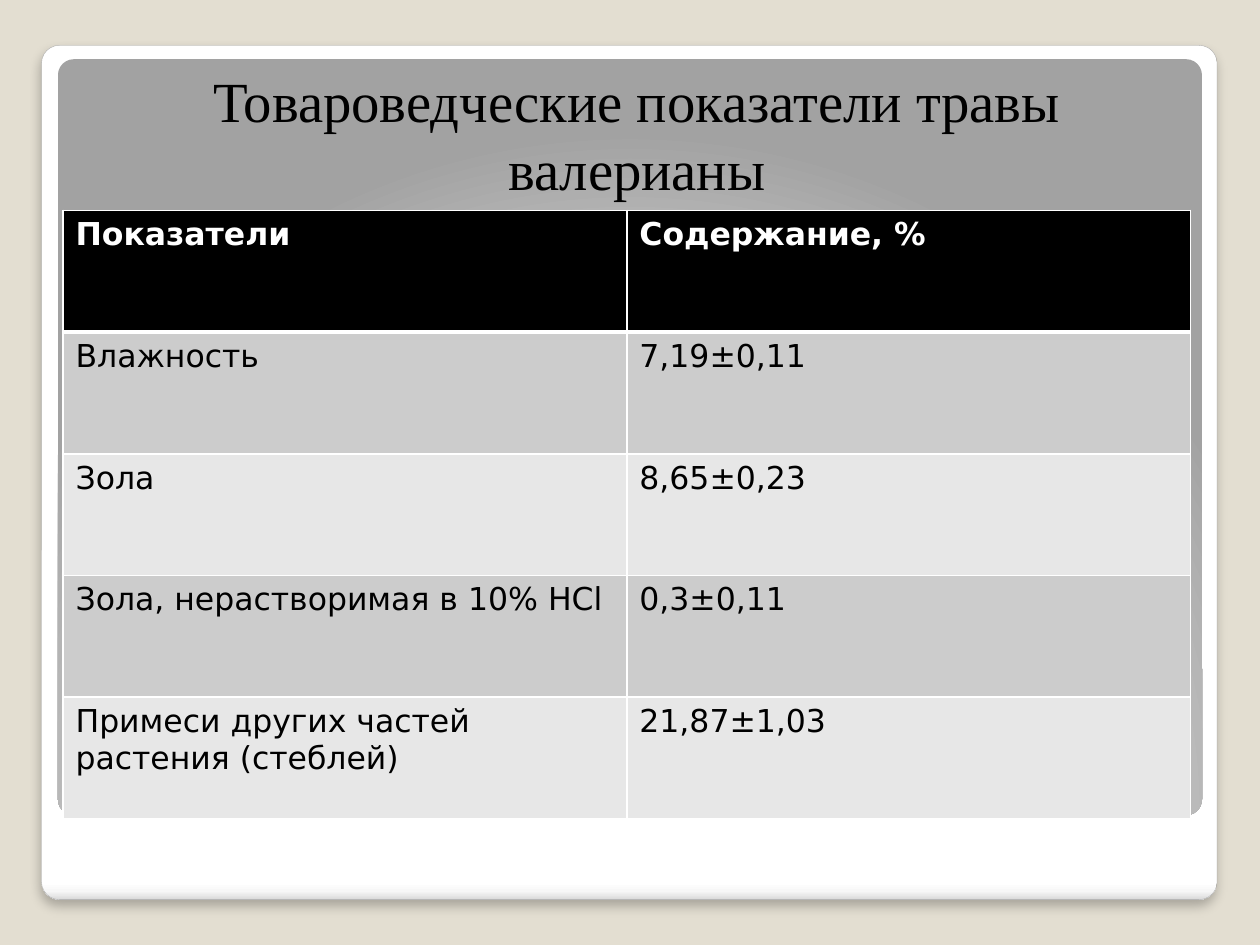
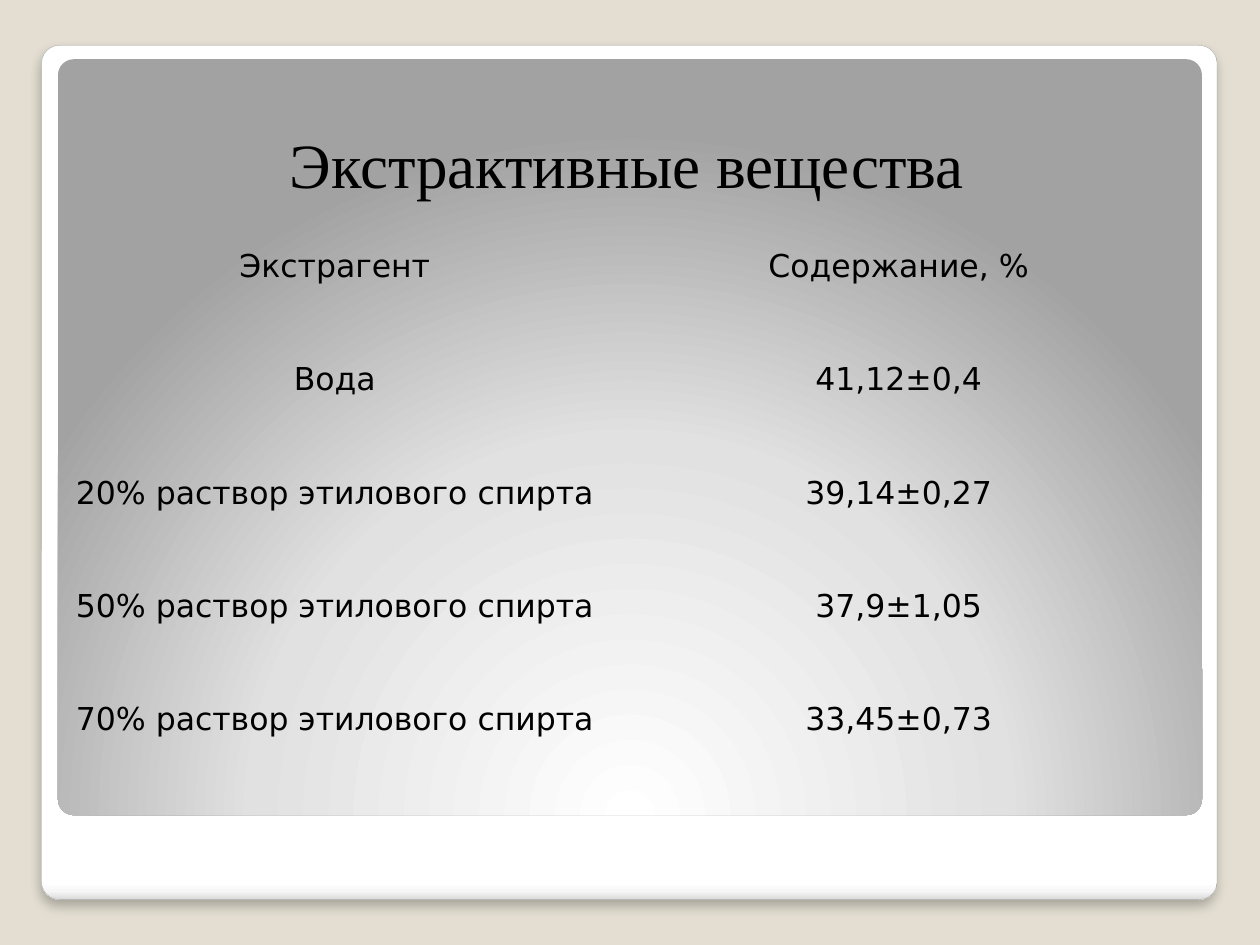
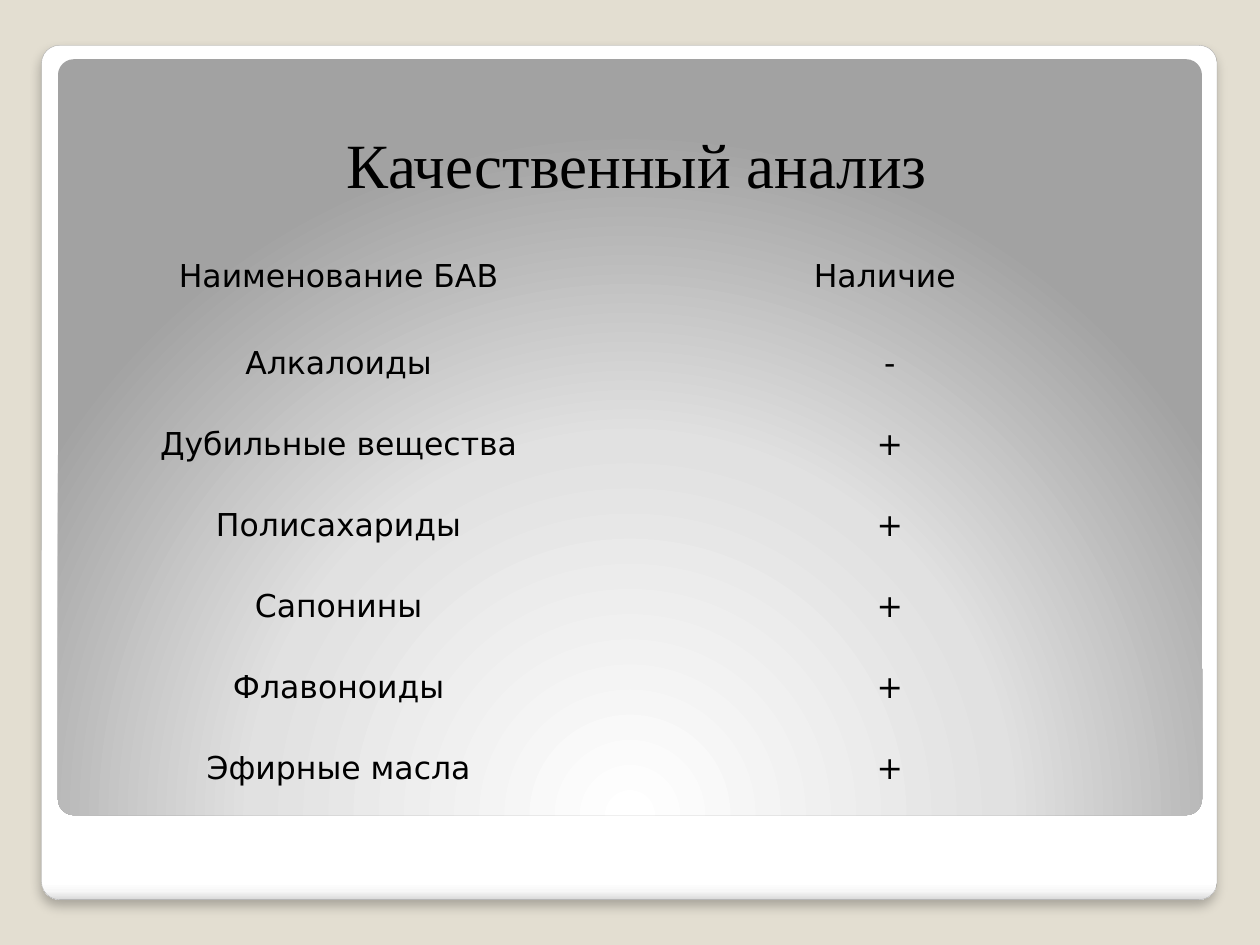
from pptx import Presentation
from pptx.dml.color import RGBColor
from pptx.enum.shapes import MSO_SHAPE
from pptx.enum.text import MSO_ANCHOR, MSO_AUTO_SIZE, PP_ALIGN
from pptx.oxml import parse_xml
from pptx.oxml.ns import nsdecls, qn
from pptx.util import Inches, Pt

COLORS = {
    "background": "E3DED1",
    "outline": "A4A4A4",
    "text": "000000",
    "header": "000000",
    "header text": "FFFFFF",
    "border": "FFFFFF",
    "odd row": "CCCCCC",
    "even row": "E7E7E7",
}
TITLE_FONT = "Times New Roman"
BODY_FONT = "DejaVu Sans"
NO_STYLE = "{2D5ABB26-0587-4C30-8999-92F81FD0307C}"
TITLE_TOP, TITLE_WIDTH, TITLE_HEIGHT = 0.5, 8.95, 1.15

# Positions in percent along the gradient, with the colour at each
CARD_STOPS = [(0, "FFFFFF"), (98, "FFFFFF"), (99, "F7F7F7"), (100, "DADADA")]
PANEL_STOPS = [(0, "FFFFFF"), (55, "E1E1E1"), (100, "A2A2A2")]
CARD_DIRECTION = '<a:lin ang="5400000" scaled="0"/>'
PANEL_DIRECTION = (
    '<a:path path="circle">'
    '<a:fillToRect l="50000" t="175000" r="50000" b="-75000"/></a:path>'
)

# "table" is left, top, width, height; "header_height" is set where it differs
SLIDES = [
    {
        "title": "Товароведческие показатели травы валерианы",
        "title_left": 0.58,
        "title_size": 32.4,
        "table": (0.5, 1.67, 8.95, 4.83),
        "banded": True,
        "rows": [
            ("Показатели", "Содержание, %"),
            ("Влажность", "7,19±0,11"),
            ("Зола", "8,65±0,23"),
            ("Зола, нерастворимая в 10% HCl", "0,3±0,11"),
            ("Примеси других частей растения (стеблей)", "21,87±1,03"),
        ],
    },
    {
        "title": "Экстрактивные вещества",
        "title_left": 0.5,
        "title_size": 36,
        "table": (0.42, 1.92, 8.95, 4.5),
        "banded": False,
        "rows": [
            ("Экстрагент", "Содержание, %"),
            ("Вода", "41,12±0,4"),
            ("20% раствор этилового спирта", "39,14±0,27"),
            ("50% раствор этилового спирта", "37,9±1,05"),
            ("70% раствор этилового спирта", "33,45±0,73"),
        ],
    },
    {
        "title": "Качественный анализ",
        "title_left": 0.58,
        "title_size": 36,
        "table": (0.5, 2, 8.75, 4.55),
        "header_height": 0.69,
        "banded": False,
        "rows": [
            ("Наименование БАВ", "Наличие "),
            ("Алкалоиды", "-"),
            ("Дубильные вещества", "+"),
            ("Полисахариды", "+"),
            ("Сапонины", "+"),
            ("Флавоноиды", "+"),
            ("Эфирные масла", "+"),
        ],
    },
]


def color(name):
    return RGBColor.from_string(COLORS[name])


def add_rounded_panel(slide, box, stops, direction):
    shape = slide.shapes.add_shape(
        MSO_SHAPE.ROUNDED_RECTANGLE, *(Inches(length) for length in box)
    )
    shape.adjustments[0] = 0.021
    shape.shadow.inherit = False
    shape.line.fill.background()
    shape.fill.background()
    stop_xml = "".join(
        f'<a:gs pos="{position * 1000}"><a:srgbClr val="{value}"/></a:gs>'
        for position, value in stops
    )
    gradient = parse_xml(
        f'<a:gradFill {nsdecls("a")} rotWithShape="1">'
        f"<a:gsLst>{stop_xml}</a:gsLst>{direction}</a:gradFill>"
    )
    properties = shape.element.spPr
    properties.replace(properties.find(qn("a:noFill")), gradient)
    return shape


def add_soft_shadow(shape):
    effects = shape.element.spPr.find(qn("a:effectLst"))
    effects.append(parse_xml(
        f'<a:outerShdw {nsdecls("a")} blurRad="{Pt(6)}" dist="{Pt(4)}" '
        'dir="5400000" algn="tl" rotWithShape="0">'
        '<a:srgbClr val="000000"><a:alpha val="25000"/></a:srgbClr></a:outerShdw>'
    ))


def decorate_layout(layout, slide):
    """Draw the card and panel on the slide, then move them to its layout."""
    card = add_rounded_panel(slide, (0.33, 0.36, 9.33, 6.78), CARD_STOPS, CARD_DIRECTION)
    card.line.color.rgb = color("outline")
    card.line.width = Pt(0.16)
    add_soft_shadow(card)
    panel = add_rounded_panel(slide, (0.46, 0.47, 9.08, 6), PANEL_STOPS, PANEL_DIRECTION)
    for offset, shape in enumerate((card, panel)):
        shape.element.nvSpPr.cNvPr.set("id", str(100 + offset))
        layout.shapes.element.insert(2 + offset, shape.element)


def format_title(slide, content):
    title = slide.shapes.title
    title.left, title.top = Inches(content["title_left"]), Inches(TITLE_TOP)
    title.width, title.height = Inches(TITLE_WIDTH), Inches(TITLE_HEIGHT)
    frame = title.text_frame
    frame.text = content["title"]
    frame.auto_size = MSO_AUTO_SIZE.NONE
    frame.vertical_anchor = MSO_ANCHOR.BOTTOM
    paragraph = frame.paragraphs[0]
    paragraph.alignment = PP_ALIGN.CENTER
    paragraph.font.name = TITLE_FONT
    paragraph.font.size = Pt(content["title_size"])
    paragraph.font.color.rgb = color("text")


def set_borders(cell, row_index):
    """Thin white lines, with a thick one between header and body."""
    widths = {"L": 1, "R": 1, "T": 3 if row_index == 1 else 1, "B": 3 if row_index == 0 else 1}
    properties = cell._tc.get_or_add_tcPr()
    for side, width in widths.items():
        properties.append(parse_xml(
            f'<a:ln{side} {nsdecls("a")} w="{Pt(width)}"><a:solidFill>'
            f'<a:srgbClr val="{COLORS["border"]}"/></a:solidFill></a:ln{side}>'
        ))


def format_cell(cell, row_index, banded):
    is_band_header = banded and row_index == 0
    paragraph = cell.text_frame.paragraphs[0]
    paragraph.alignment = PP_ALIGN.LEFT if banded else PP_ALIGN.CENTER
    paragraph.font.name = BODY_FONT
    paragraph.font.size = Pt(18)
    paragraph.font.bold = is_band_header
    paragraph.font.color.rgb = color("header text" if is_band_header else "text")
    if not banded:
        cell.fill.background()
        return
    set_borders(cell, row_index)
    cell.fill.solid()
    body_fill = "odd row" if row_index % 2 else "even row"
    cell.fill.fore_color.rgb = color("header" if is_band_header else body_fill)


def add_data_table(slide, content):
    rows = content["rows"]
    left, top, width, height = content["table"]
    graphic_frame = slide.shapes.add_table(
        len(rows), len(rows[0]), Inches(left), Inches(top), Inches(width), Inches(height)
    )
    table = graphic_frame.table
    for style in graphic_frame.element.iter(qn("a:tableStyleId")):
        style.text = NO_STYLE
    header_height = content.get("header_height", height / len(rows))
    body_height = (height - header_height) / (len(rows) - 1)
    for row_index, values in enumerate(rows):
        table.rows[row_index].height = Inches(body_height if row_index else header_height)
        for column_index, value in enumerate(values):
            cell = table.cell(row_index, column_index)
            cell.text = value
            format_cell(cell, row_index, content["banded"])


def main():
    presentation = Presentation()
    presentation.slide_width, presentation.slide_height = Inches(10), Inches(7.5)
    background = presentation.slide_master.background.fill
    background.solid()
    background.fore_color.rgb = color("background")
    layout = presentation.slide_layouts.get_by_name("Title Only")
    slides = [presentation.slides.add_slide(layout) for _ in SLIDES]
    decorate_layout(layout, slides[0])
    for slide, content in zip(slides, SLIDES):
        format_title(slide, content)
        add_data_table(slide, content)
    presentation.save("out.pptx")


if __name__ == "__main__":
    main()
